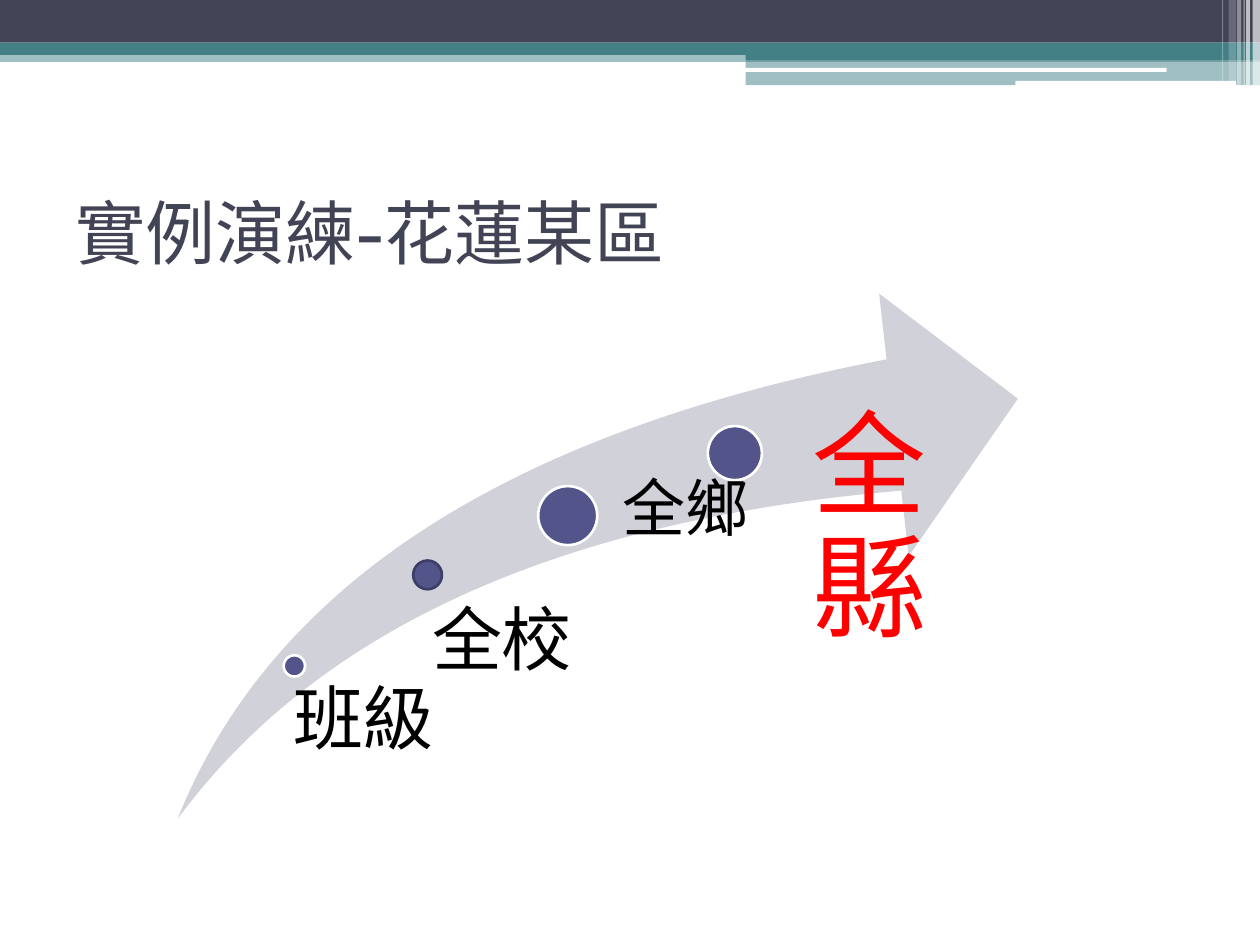
from lxml.etree import SubElement
from pptx import Presentation
from pptx.dml.color import RGBColor
from pptx.enum.shapes import MSO_SHAPE
from pptx.enum.text import MSO_ANCHOR, MSO_AUTO_SIZE
from pptx.oxml.ns import qn
from pptx.util import Cm, Pt

NAVY, TEAL, WHITE, BLACK = "424456", "438086", "FFFFFF", "000000"
ARROW, DOT, DOT_EDGE, RED = "D1D1DA", "53548A", "3D3E66", "FF0000"
SLIDE_WIDTH, SLIDE_HEIGHT = 25.4, 19.05

# left, top, width, height in cm; colour; opacity in percent
BANDS = [
    (0, 1.02, SLIDE_WIDTH, 0.23, TEAL, 50),
    (0, 0, SLIDE_WIDTH, 0.86, NAVY, 100),
    (0, 0.86, SLIDE_WIDTH, 0.25, TEAL, 100),
    (15.03, 0.99, 10.37, 0.23, TEAL, 100),
    (15.03, 1.22, 10.37, 0.5, TEAL, 50),
]
ROUNDED_LINES = [
    (15.01, 1.37, 8.51, 0.08, WHITE, 100),
    (20.47, 1.63, 4.45, 0.1, WHITE, 100),
]
# left, width, height, opacity
STRIPES = [
    (25.25, 0.15, 1.73, 65),
    (25.12, 0.08, 1.73, 65),
    (25.07, 0.02, 1.73, 60),
    (24.94, 0.08, 1.73, 40),
    (24.77, 0.15, 1.63, 20),
    (24.64, 0.02, 1.63, 30),
]
TITLE = "實例演練-花蓮某區"
SWOOSH = (3.58, 5.92, 16.94, 10.59)
# left, top, diameter, edge colour
DOTS = [
    (5.72, 13.21, 0.43, WHITE),
    (10.85, 9.8, 1.19, WHITE),
    (14.27, 8.59, 1.09, WHITE),
    (8.33, 11.3, 0.58, DOT_EDGE),
]
# text, place, left inset, size, colour
STAGES = [
    ("班級", (5.69, 13.79, 3.94, 3.05), 0.23, 40, BLACK),
    ("全校", (8.28, 12.19, 4.06, 4.17), 0.43, 40, BLACK),
    ("全縣", (15.8, 8.23, 3.71, 7.37), 0.58, 65, RED),
]
TOWNSHIP = ("全鄉", (12.29, 9.32, 3.07, 1.8))


def colour(value):
    return RGBColor.from_string(value)


def add_filled(page, kind, place, fill, opacity=100, edge=None):
    shape = page.shapes.add_shape(kind, *map(Cm, place))
    shape.shadow.inherit = False
    shape.fill.solid()
    shape.fill.fore_color.rgb = colour(fill)
    if opacity < 100:
        tint = shape._element.spPr.find(qn("a:solidFill"))[0]
        SubElement(tint, qn("a:alpha"), val=str(opacity * 1000))
    if edge:
        shape.line.color.rgb = colour(edge)
        shape.line.width = Pt(1.5)
    else:
        shape.line.fill.background()
    return shape


def add_text(page, text, place, size, font, ink):
    """Add a one-paragraph text box and return its frame."""
    frame = page.shapes.add_textbox(*map(Cm, place)).text_frame
    frame.word_wrap = True
    span = frame.paragraphs[0].add_run()
    span.text = text
    span.font.size = Pt(size)
    span.font.name = font
    span.font.color.rgb = colour(ink)
    return frame


def add_header(page):
    for *place, fill, opacity in BANDS:
        add_filled(page, MSO_SHAPE.RECTANGLE, place, fill, opacity)
    for *place, fill, opacity in ROUNDED_LINES:
        add_filled(page, MSO_SHAPE.ROUNDED_RECTANGLE, place, fill, opacity)
    for left, width, height, opacity in STRIPES:
        add_filled(page, MSO_SHAPE.RECTANGLE, (left, 0, width, height), WHITE, opacity)


def add_growth_arrow(page):
    swoosh = add_filled(page, MSO_SHAPE.SWOOSH_ARROW, SWOOSH, ARROW)
    swoosh.adjustments[0] = swoosh.adjustments[1] = 0.25
    for left, top, diameter, edge in DOTS:
        add_filled(page, MSO_SHAPE.OVAL, (left, top, diameter, diameter), DOT, edge=edge)
    for text, place, inset, size, ink in STAGES:
        frame = add_text(page, text, place, size, "Cambria", ink)
        frame.margin_left = Cm(inset)
        frame.margin_top = frame.margin_right = frame.margin_bottom = 0
        frame.paragraphs[0].line_spacing = 0.9
    frame = add_text(page, *TOWNSHIP, 36, "Cambria", BLACK)
    frame.word_wrap = False
    frame.auto_size = MSO_AUTO_SIZE.SHAPE_TO_FIT_TEXT


def main():
    deck = Presentation()
    deck.slide_width, deck.slide_height = Cm(SLIDE_WIDTH), Cm(SLIDE_HEIGHT)
    page = deck.slides.add_slide(deck.slide_layouts[6])
    add_header(page)
    title = add_text(page, TITLE, (1.27, 3.18, 22.86, 2.97), 40, "Cabin", NAVY)
    title.vertical_anchor = MSO_ANCHOR.MIDDLE
    add_growth_arrow(page)
    deck.save("out.pptx")


if __name__ == "__main__":
    main()
